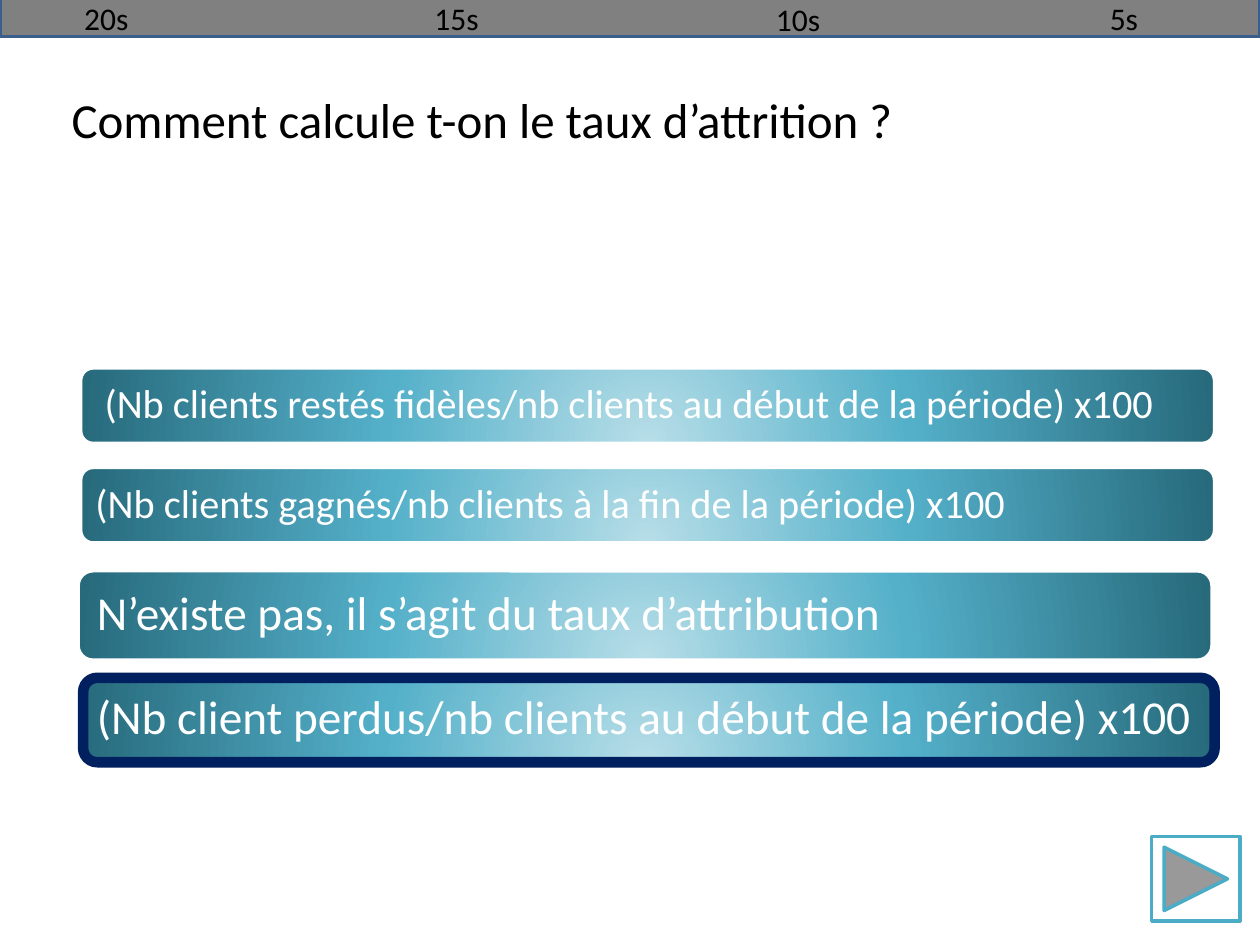
from pptx import Presentation
from pptx.dml.color import RGBColor as Rgb
from pptx.enum.shapes import MSO_SHAPE as Kind
from pptx.enum.text import MSO_ANCHOR as Anchor
from pptx.oxml import parse_xml
from pptx.oxml.ns import nsdecls
from pptx.util import Inches, Pt

deck = Presentation()
deck.slide_width, deck.slide_height = Inches(10), Inches(7.5)
slide = deck.slides.add_slide(deck.slide_layouts[6])
UNIT = deck.slide_width / 100  # grid of 100 columns by 75 rows

STOPS = [(0, "B7DEE8"), (46, "54B0C9"), (100, "276A7C")]
GLOW = (
    f'<a:gradFill rotWithShape="1" {nsdecls("a")}><a:gsLst>'
    + "".join(f'<a:gs pos="{pos * 1000}"><a:srgbClr val="{tone}"/></a:gs>'
              for pos, tone in STOPS)
    + '</a:gsLst><a:path path="circle">'
    '<a:fillToRect l="50000" t="130000" r="50000" b="-30000"/>'
    '</a:path></a:gradFill>'
)


def draw(kind, box, line, width, fill=None):
    shape = slide.shapes.add_shape(kind, *[int(n * UNIT) for n in box])
    shape.shadow.inherit = False
    shape.line.color.rgb = Rgb.from_string(line)
    shape.line.width = Pt(width)
    if fill:
        shape.fill.solid()
        shape.fill.fore_color.rgb = Rgb.from_string(fill)
    else:
        shape.fill.background()
    return shape


def write(text, box, size, tone="000000"):
    frame = slide.shapes.add_textbox(*[int(n * UNIT) for n in box]).text_frame
    frame.word_wrap = True
    para = frame.paragraphs[0]
    para.text = text
    para.font.name, para.font.size = "Calibri", Pt(size)
    para.font.color.rgb = Rgb.from_string(tone)
    return frame


# Question
write("Comment calcule t-on le taux d’attrition ?", (4.7, 6.6, 90, 12.2), 28)

# Answers: left, top and height of the bar, text size, inset
answers = [
    (" (Nb clients restés fidèles/nb clients au début de la période) x100",
     6.4, 29.2, 6, 23, 1),
    ("(Nb clients gagnés/nb clients à la fin de la période) x100",
     6.4, 37.1, 6, 23, 1),
    ("N’existe pas, il s’agit du taux d’attribution",
     6.2, 45.3, 7.1, 27, 1.1),
    ("(Nb client perdus/nb clients au début de la période) x100",
     6.2, 53.5, 7.1, 27, 1.1),
]
for text, left, top, high, size, inset in answers:
    bar = draw(Kind.ROUNDED_RECTANGLE, (left, top, 90, high), "FFFFFF", 2)
    plain = bar.fill._xPr.find("{*}noFill")
    plain.getparent().replace(plain, parse_xml(GLOW))
    frame = write(text, (6.6, top + 0.3, 89.4, high - 0.6), size, "FFFFFF")
    frame.vertical_anchor = Anchor.MIDDLE
    frame.margin_left = frame.margin_right = int(inset * UNIT)
    frame.margin_top = frame.margin_bottom = int(inset * UNIT)
    frame.paragraphs[0].line_spacing = 0.9

# Frame around the right answer
draw(Kind.ROUNDED_RECTANGLE, (6.6, 53.8, 89.8, 6.7), "002060", 6)

# Next button
button = draw(Kind.ACTION_BUTTON_BACK_OR_PREVIOUS, (91.4, 66.4, 7, 6.7),
              "4BACC6", 2, "FFFFFF")
button.rotation = 180

# Time bar
draw(Kind.RECTANGLE, (0, -0.2, 100, 3.1), "3A5F8C", 2, "808080")
for mark, left, top, wide in [("5s", 87.1, -0.6, 4.7), ("10s", 60.6, -0.5, 6.3),
                              ("15s", 33.5, -0.6, 6.3), ("20s", 5.7, -0.6, 6.3)]:
    write(mark, (left, top, wide, 4), 18).word_wrap = False

deck.save("out.pptx")
